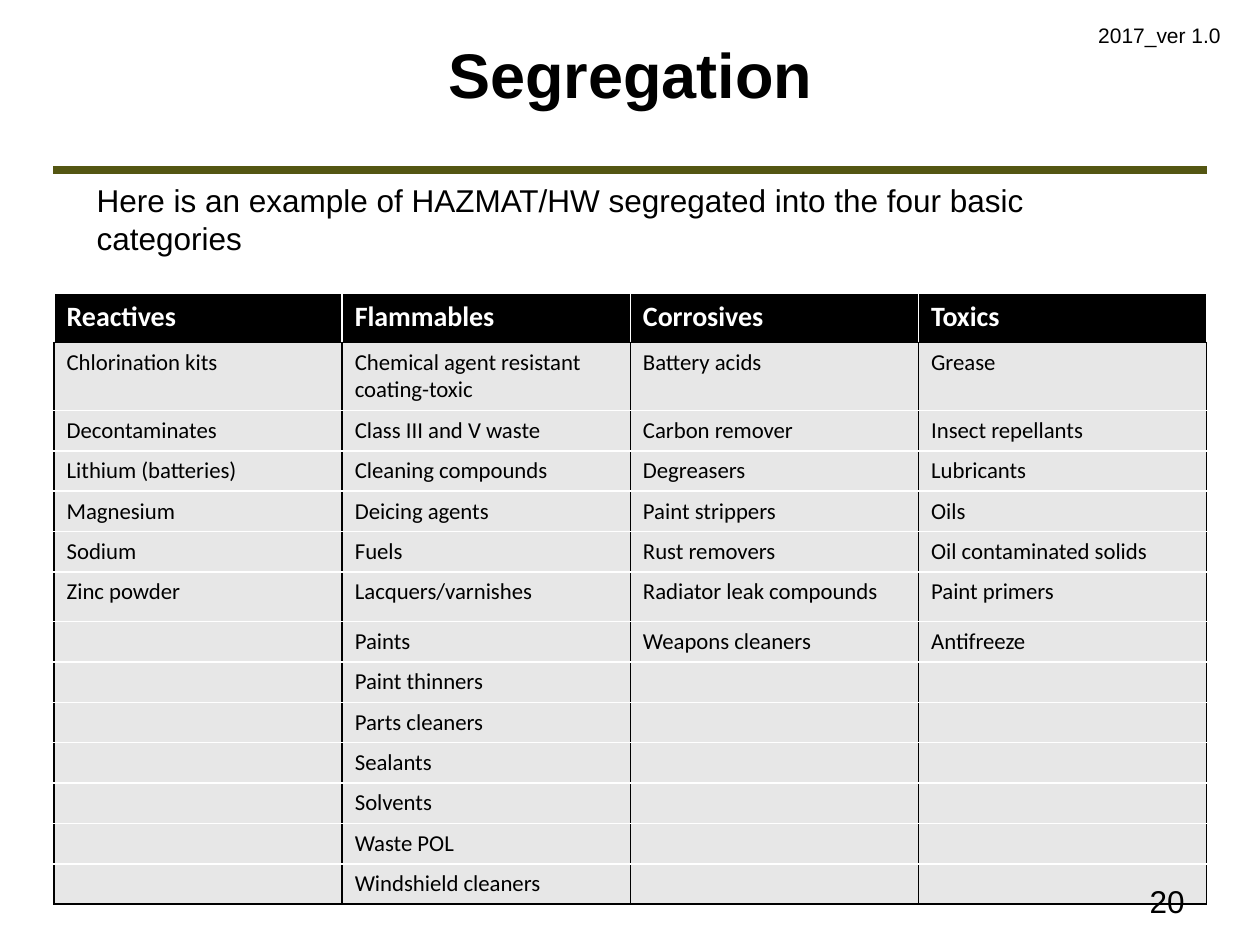
from itertools import zip_longest

from lxml.etree import SubElement
from pptx import Presentation
from pptx.dml.color import RGBColor
from pptx.enum.shapes import MSO_CONNECTOR
from pptx.enum.text import MSO_ANCHOR, PP_ALIGN
from pptx.oxml.ns import qn
from pptx.util import Cm, Pt

# Content
TITLE = "Segregation"
INTRO = "Here is an example of HAZMAT/HW segregated into the four basic categories"
VERSION = "2017_ver 1.0"
PAGE_NUMBER = "20"
CATEGORIES = {
    "Reactives": ["Chlorination kits", "Decontaminates", "Lithium (batteries)",
                  "Magnesium", "Sodium", "Zinc powder"],
    "Flammables": ["Chemical agent resistant coating-toxic", "Class III and V waste",
                   "Cleaning compounds", "Deicing agents", "Fuels",
                   "Lacquers/varnishes", "Paints", "Paint thinners", "Parts cleaners",
                   "Sealants", "Solvents", "Waste POL", "Windshield cleaners"],
    "Corrosives": ["Battery acids", "Carbon remover", "Degreasers", "Paint strippers",
                   "Rust removers", "Radiator leak compounds", "Weapons cleaners"],
    "Toxics": ["Grease", "Insect repellants", "Lubricants", "Oils",
               "Oil contaminated solids", "Paint primers", "Antifreeze"],
}

# Look
BLACK, WHITE, GREY, OLIVE = "000000", "FFFFFF", "E7E7E7", "545612"
ROW_HEIGHT = 0.81
SPECIAL_HEIGHTS = {0: 0.98, 1: 1.37, 6: 1.0}
COLUMN_WIDTH = 5.81


def color(value):
    return RGBColor.from_string(value)


def style(paragraph, font, size, ink=BLACK, bold=False):
    paragraph.font.name = font
    paragraph.font.size = Pt(size)
    paragraph.font.bold = bold
    paragraph.font.color.rgb = color(ink)


def add_text(page, text, place, size, align=PP_ALIGN.LEFT):
    box = page.shapes.add_textbox(*map(Cm, place))
    box.text_frame.word_wrap = True
    para = box.text_frame.paragraphs[0]
    para.text = text
    para.alignment = align
    style(para, "Arial", size)


def set_borders(cell, left, right, top, bottom):
    properties = cell._tc.get_or_add_tcPr()
    edges = {"a:lnL": left, "a:lnR": right, "a:lnT": top, "a:lnB": bottom}
    for position, (tag, ink) in enumerate(edges.items()):
        line = SubElement(properties, qn(tag), w=str(Pt(1)))
        fill = SubElement(line, qn("a:solidFill"))
        SubElement(fill, qn("a:srgbClr"), val=ink)
        properties.insert(position, line)


def fill_cell(cell, text, is_header, top, bottom):
    para = cell.text_frame.paragraphs[0]
    size = 16 if is_header else 13
    if text:
        para.text = text
    else:
        # An empty cell needs its own text size to keep the row low
        SubElement(para._p, qn("a:endParaRPr"), sz=str(size * 100))
    style(para, "Calibri", size, WHITE if is_header else BLACK, is_header)
    cell.fill.solid()
    cell.fill.fore_color.rgb = color(BLACK if is_header else GREY)
    side = WHITE if is_header else BLACK
    set_borders(cell, side, side, top, bottom)


def add_category_table(page):
    rows = [list(CATEGORIES), *zip_longest(*CATEGORIES.values(), fillvalue="")]
    heights = [SPECIAL_HEIGHTS.get(index, ROW_HEIGHT) for index in range(len(rows))]
    columns = len(CATEGORIES)
    table = page.shapes.add_table(len(rows), columns, Cm(1.09), Cm(5.92),
                                  Cm(COLUMN_WIDTH * columns), Cm(sum(heights))).table
    for column in table.columns:
        column.width = Cm(COLUMN_WIDTH)
    for index, (texts, height) in enumerate(zip(rows, heights)):
        table.rows[index].height = Cm(height)
        top = BLACK if index == 1 else WHITE
        bottom = BLACK if index in (0, len(rows) - 1) else WHITE
        for cell, text in zip(table.rows[index].cells, texts):
            fill_cell(cell, text, index == 0, top, bottom)


def main():
    deck = Presentation()
    deck.slide_width, deck.slide_height = Cm(25.4), Cm(19.05)
    page = deck.slides.add_slide(deck.slide_layouts[5])

    # Title and the rule below it
    title = page.shapes.title
    title.left, title.top, title.width, title.height = map(Cm, (2.97, 0.43, 19.48, 2.11))
    title.text_frame.text = TITLE
    title.text_frame.vertical_anchor = MSO_ANCHOR.MIDDLE
    heading = title.text_frame.paragraphs[0]
    heading.alignment = PP_ALIGN.CENTER
    style(heading, "Arial", 36, bold=True)

    rule = page.shapes.add_connector(MSO_CONNECTOR.STRAIGHT,
                                     Cm(1.07), Cm(3.43), Cm(24.33), Cm(3.43))
    rule.line.color.rgb = color(OLIVE)
    rule.line.width = Pt(4.5)
    SubElement(rule._element.spPr, qn("a:effectLst"))

    # Table, then the texts around it
    add_category_table(page)
    add_text(page, PAGE_NUMBER, (18.21, 17.65, 5.92, 1.02), 18, PP_ALIGN.RIGHT)
    add_text(page, INTRO, (1.7, 3.53, 21.79, 1.8), 18)
    add_text(page, VERSION, (21.89, 0.33, 3.15, 0.76), 12)

    deck.save("out.pptx")


if __name__ == "__main__":
    main()
